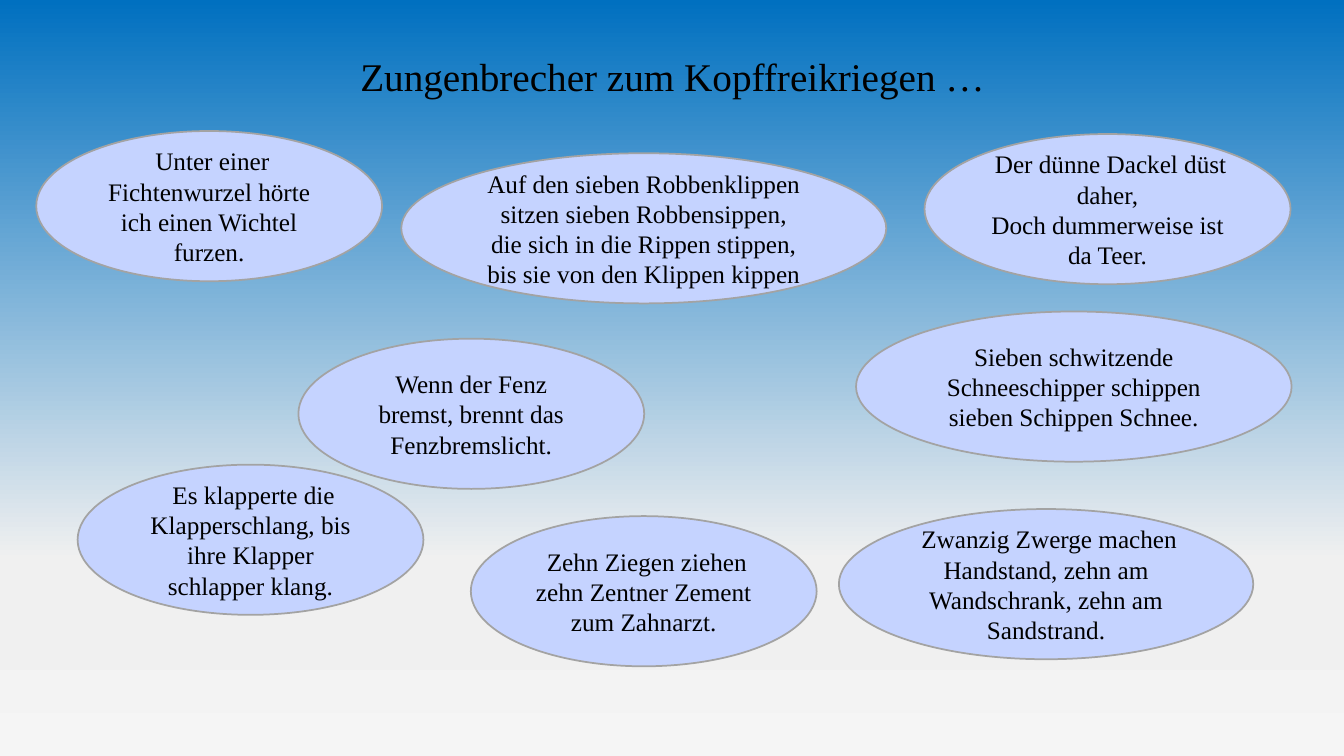
"""Build a slide of German tongue twisters in ellipses on a blue gradient."""
from dataclasses import dataclass

from lxml.etree import SubElement
from pptx import Presentation
from pptx.dml.color import RGBColor
from pptx.enum.shapes import MSO_SHAPE
from pptx.enum.text import MSO_ANCHOR, MSO_AUTO_SIZE, PP_ALIGN
from pptx.oxml.ns import qn
from pptx.slide import Slide
from pptx.text.text import TextFrame
from pptx.util import Inches, Pt

FONT_NAME = "Times New Roman"
TEXT_COLOR = "000000"
BUBBLE_FILL = "C5D3FF"
BUBBLE_LINE = "A3A3A3"
BUBBLE_HEIGHT = 1.49
NARROW = 3.43
SKY_STOPS = [(0, "0070C0"), (74, "F0F0F0"), (83, "F0F0F0"), (100, "F5F5F5")]


@dataclass
class TongueTwister:
    left: float
    top: float
    width: float
    text: str


TONGUE_TWISTERS = [
    TongueTwister(2.96, 3.36, NARROW, "Wenn der Fenz bremst, brennt das Fenzbremslicht."),
    TongueTwister(4.67, 5.12, NARROW, " Zehn Ziegen ziehen zehn Zentner Zement zum Zahnarzt."),
    TongueTwister(0.36, 1.3, NARROW, " Unter einer Fichtenwurzel hörte ich einen Wichtel furzen."),
    TongueTwister(3.98, 1.52, 4.81, "Auf den sieben Robbenklippen sitzen sieben Robbensippen, "
                  "die sich in die Rippen stippen, bis sie von den Klippen kippen"),
    TongueTwister(8.32, 5.05, 4.11, " Zwanzig Zwerge machen Handstand, zehn am Wandschrank, "
                  "zehn am Sandstrand."),
    TongueTwister(8.49, 3.09, 4.32, "Sieben schwitzende Schneeschipper schippen "
                  "sieben Schippen Schnee."),
    TongueTwister(9.17, 1.33, 3.63, " Der dünne Dackel düst daher,\nDoch dummerweise ist da Teer."),
    TongueTwister(0.77, 4.61, NARROW, " Es klapperte die Klapperschlang, bis ihre Klapper "
                  "schlapper klang."),
]


def color(value: str) -> RGBColor:
    return RGBColor.from_string(value)


def paint_sky(slide: Slide) -> None:
    fill = slide.background.fill
    fill.gradient()
    fill.gradient_angle = 270
    stop_list = next(slide.element.iter(qn("a:gsLst")))
    for stop in list(stop_list):
        stop_list.remove(stop)
    for position, value in SKY_STOPS:
        stop = SubElement(stop_list, qn("a:gs"), pos=str(position * 1000))
        SubElement(stop, qn("a:srgbClr"), val=value)


def write_text(text_frame: TextFrame, text: str, size: int) -> None:
    text_frame.word_wrap = True
    text_frame.text = text
    for paragraph in text_frame.paragraphs:
        paragraph.alignment = PP_ALIGN.CENTER
        paragraph.font.name = FONT_NAME
        paragraph.font.size = Pt(size)
        paragraph.font.color.rgb = color(TEXT_COLOR)


def add_bubble(slide: Slide, twister: TongueTwister) -> None:
    shape = slide.shapes.add_shape(
        MSO_SHAPE.OVAL, Inches(twister.left), Inches(twister.top),
        Inches(twister.width), Inches(BUBBLE_HEIGHT))
    shape.shadow.inherit = False
    shape.fill.solid()
    shape.fill.fore_color.rgb = color(BUBBLE_FILL)
    shape.line.color.rgb = color(BUBBLE_LINE)
    shape.line.width = Pt(1.25)
    shape.text_frame.vertical_anchor = MSO_ANCHOR.MIDDLE
    write_text(shape.text_frame, twister.text, 18)


def add_title(slide: Slide) -> None:
    title = slide.shapes.add_textbox(Inches(2.21), Inches(0.47), Inches(8.92), Inches(0.57))
    title.text_frame.auto_size = MSO_AUTO_SIZE.SHAPE_TO_FIT_TEXT
    write_text(title.text_frame, "Zungenbrecher zum Kopffreikriegen …", 28)


def main() -> None:
    presentation = Presentation()
    presentation.slide_width = Inches(13.33)
    presentation.slide_height = Inches(7.5)
    slide = presentation.slides.add_slide(presentation.slide_layouts[6])
    paint_sky(slide)
    for twister in TONGUE_TWISTERS:
        add_bubble(slide, twister)
    add_title(slide)
    presentation.save("out.pptx")


if __name__ == "__main__":
    main()
